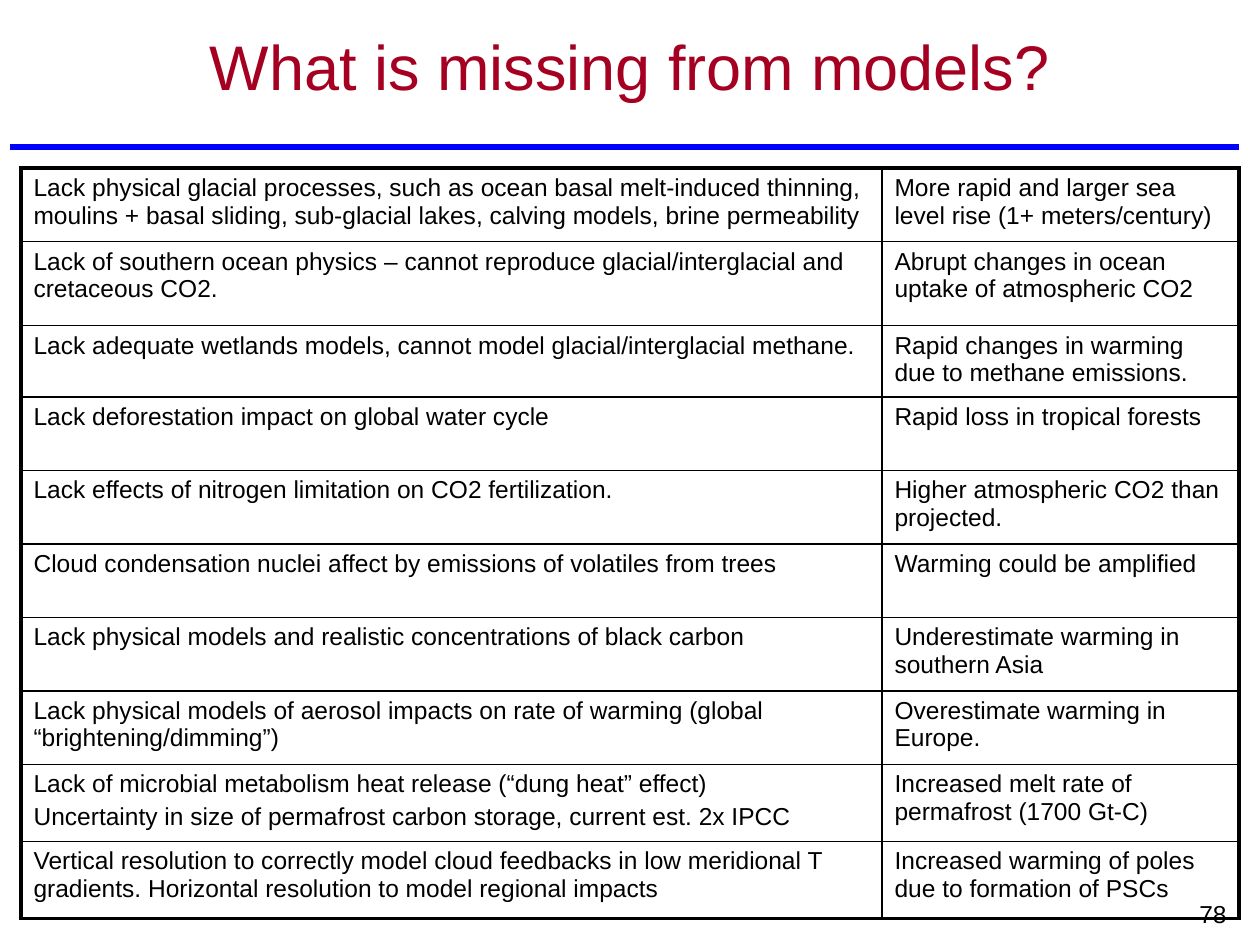
from lxml.etree import SubElement as Sub
from pptx import Presentation as Deck
from pptx.dml.color import RGBColor as Rgb
from pptx.enum.shapes import MSO_CONNECTOR as Link
from pptx.enum.text import MSO_ANCHOR as Anchor, PP_ALIGN as Align
from pptx.oxml.ns import qn
from pptx.util import Inches, Pt

COLORS = {"title": "A50021", "rule": "0000FF", "ink": "000000"}
GAPS = [
    ("Lack physical glacial processes, such as ocean basal melt-induced thinning, "
     "moulins + basal sliding, sub-glacial lakes, calving models, brine permeability",
     "More rapid and larger sea level rise (1+ meters/century)"),
    ("Lack of southern ocean physics – cannot reproduce glacial/interglacial and cretaceous CO2.",
     "Abrupt changes in ocean uptake of atmospheric CO2"),
    ("Lack adequate wetlands models, cannot model glacial/interglacial methane.",
     "Rapid changes in warming due to methane emissions."),
    ("Lack deforestation impact on global water cycle",
     "Rapid loss in tropical forests"),
    ("Lack effects of nitrogen limitation on CO2 fertilization.",
     "Higher atmospheric CO2 than projected."),
    ("Cloud condensation nuclei affect by emissions of volatiles from trees",
     "Warming could be amplified"),
    ("Lack physical models and realistic concentrations of black carbon",
     "Underestimate warming in southern Asia"),
    ("Lack physical models of aerosol impacts on rate of warming (global “brightening/dimming”)",
     "Overestimate warming in Europe."),
    ("Lack of microbial metabolism heat release (“dung heat” effect)\n"
     "Uncertainty in size of permafrost carbon storage, current est. 2x IPCC",
     "Increased melt rate of permafrost (1700 Gt-C)"),
    ("Vertical resolution to correctly model cloud feedbacks in low meridional T gradients. "
     "Horizontal resolution to model regional impacts",
     "Increased warming of poles due to formation of PSCs"),
]
WIDTHS = [82, 34]
HEIGHTS = [7, 8, 6.8] + [7] * 5 + [7.35] * 2


def write(frame, text, size=14, color="ink", align=Align.LEFT, anchor=Anchor.TOP):
    frame.word_wrap = True
    frame.vertical_anchor = anchor
    for i, line in enumerate(text.split("\n")):
        para = frame.paragraphs[0] if i == 0 else frame.add_paragraph()
        para.alignment = align
        para.space_before = Pt(0.2 * size if i else 0)
        run = para.add_run()
        run.text = line
        run.font.name = "Arial"
        run.font.size = Pt(size)
        run.font.color.rgb = Rgb.from_string(COLORS[color])


class Page:
    thick, thin = 2.25, 1

    def __init__(self, deck):
        self.unit = deck.slide_width / 120
        self.slide = deck.slides.add_slide(deck.slide_layouts[6])

    def grid(self, *spans):
        return [round(span * self.unit) for span in spans]

    def text(self, left, top, width, height, words, **style):
        box = self.slide.shapes.add_textbox(*self.grid(left, top, width, height))
        write(box.text_frame, words, **style)

    def rule(self, left, right, row, color, weight):
        line = self.slide.shapes.add_connector(
            Link.STRAIGHT, *self.grid(left, row, right, row))
        line.line.color.rgb = Rgb.from_string(COLORS[color])
        line.line.width = Pt(weight)
        Sub(line._element.spPr, qn("a:effectLst"))

    def border(self, cell, outer):
        props = cell._tc.get_or_add_tcPr()
        for side in "LRTB":
            weight = self.thick if side in outer else self.thin
            edge = Sub(props, qn(f"a:ln{side}"), w=str(Pt(weight)))
            fill = Sub(edge, qn("a:solidFill"))
            Sub(fill, qn("a:srgbClr"), val=COLORS["ink"])

    def table(self, left, top, widths, heights, data):
        table = self.slide.shapes.add_table(
            len(heights), len(widths),
            *self.grid(left, top, sum(widths), sum(heights))).table
        table.first_row = table.horz_banding = False
        for col, width in zip(table.columns, self.grid(*widths)):
            col.width = width
        for row, height in zip(table.rows, self.grid(*heights)):
            row.height = height
        for r, row in enumerate(data):
            for c, words in enumerate(row):
                cell = table.cell(r, c)
                tests = {"L": c == 0, "R": c == len(widths) - 1,
                         "T": r == 0, "B": r == len(heights) - 1}
                self.border(cell, [side for side, hit in tests.items() if hit])
                cell.fill.background()
                write(cell.text_frame, words)


def main():
    deck = Deck()
    deck.slide_width, deck.slide_height = Inches(10), Inches(7.5)
    page = Page(deck)
    page.rule(1, 118, 14, "rule", 3)
    page.text(110, 85, 8, 3.25, "78", align=Align.RIGHT)
    page.text(3, 1, 114, 10.5, "What is missing from models?", size=36,
              color="title", align=Align.CENTER, anchor=Anchor.MIDDLE)
    page.table(2, 16, WIDTHS, HEIGHTS, GAPS)
    deck.save("out.pptx")


if __name__ == "__main__":
    main()
